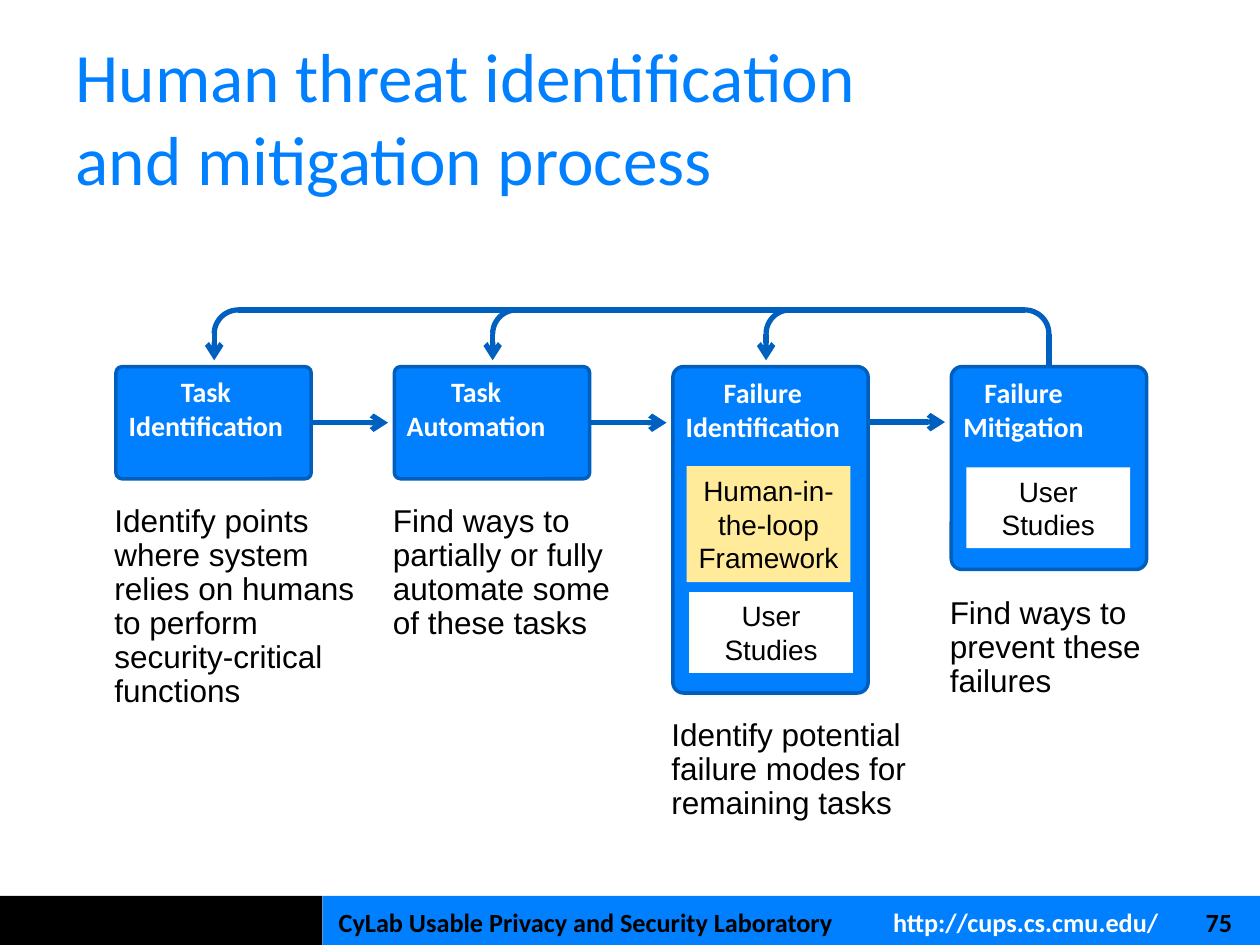
from dataclasses import dataclass

import pptx
import pptx.dml.color
import pptx.enum.dml
import pptx.enum.shapes
import pptx.enum.text
import pptx.oxml
import pptx.oxml.ns
import pptx.util
from pptx.util import Inches

BLUE, EDGE, ARROW = "0080FF", "005FBD", "0060BF"
BLACK, WHITE, CREAM = "000000", "FFFFFF", "FFEB99"
SHAPES = pptx.enum.shapes.MSO_SHAPE
ALIGN = pptx.enum.text.PP_ALIGN
ANCHOR = pptx.enum.text.MSO_ANCHOR

STAGE_LEFT, STAGE_TOP, STAGE_PITCH, STAGE_WIDTH = 0.92, 2.91, 2.21, 1.55
LABEL_INSET = 0.1
RAIL_Y, BEND, DROP_END = 2.46, 0.19, 2.86
FLOW_Y, FLOW_LENGTH = 3.35, 0.61


@dataclass
class Technique:
    name: str
    left: float
    top: float
    height: float
    color: str


@dataclass
class Stage:
    label: str
    label_width: float
    height: float
    caption: str
    caption_top: float
    techniques: tuple[Technique, ...] = ()


STAGES = [
    Stage("Task\nIdentification", 1.23, 0.89,
          "Identify points where system relies on humans to perform "
          "security-critical functions", 3.96),
    Stage("Task\nAutomation", 1.1, 0.89,
          "Find ways to partially or fully automate some of these tasks", 3.96),
    Stage("Failure\nIdentification", 1.23, 2.59,
          "Identify potential failure modes for remaining tasks", 5.66,
          (Technique("Human-in-\nthe-loop\nFramework", 5.45, 3.7, 0.92, CREAM),
           Technique("User\nStudies", 5.47, 4.7, 0.64, WHITE))),
    Stage("Failure\nMitigation", 0.95, 1.61,
          "Find ways to prevent these failures", 4.69,
          (Technique("User\nStudies", 7.67, 3.71, 0.64, WHITE),)),
]
FEEDBACK_DROPS = [1.7, 3.91, 6.08]


def rgb(color: str) -> pptx.dml.color.RGBColor:
    return pptx.dml.color.RGBColor.from_string(color)


def style(font, size: float, color: str, name: str, bold: bool = False) -> None:
    font.size = pptx.util.Pt(size)
    font.name = name
    font.bold = bold
    font.color.rgb = rgb(color)


def write(frame, text: str, size: float, color: str, name: str,
          bold: bool = False, align=ALIGN.LEFT):
    paragraph = frame.paragraphs[0]
    paragraph.text = text
    paragraph.alignment = align
    for run in paragraph.runs:
        style(run.font, size, color, name, bold)
    return paragraph


def add_block(slide, preset, left: float, top: float, width: float,
              height: float, color: str):
    block = slide.shapes.add_shape(preset, Inches(left), Inches(top),
                                   Inches(width), Inches(height))
    block.shadow.inherit = False
    block.fill.solid()
    block.fill.fore_color.rgb = rgb(color)
    block.line.fill.background()
    return block


def add_text_box(slide, left: float, top: float, width: float, height: float):
    box = slide.shapes.add_textbox(Inches(left), Inches(top),
                                   Inches(width), Inches(height))
    box.text_frame.word_wrap = True
    return box.text_frame


def draw_line(slide, x1: float, y1: float, x2: float, y2: float,
              arrow: bool = False):
    line = slide.shapes.add_connector(
        pptx.enum.shapes.MSO_CONNECTOR.STRAIGHT,
        Inches(x1), Inches(y1), Inches(x2), Inches(y2))
    line.line.color.rgb = rgb(ARROW)
    line.line.width = pptx.util.Pt(3)
    if arrow:
        outline = line.line._get_or_add_ln()
        outline.append(pptx.oxml.parse_xml(
            f'<a:tailEnd {pptx.oxml.ns.nsdecls("a")} type="arrow"/>'))
    line._element.spPr.append(pptx.oxml.parse_xml(
        f'<a:effectLst {pptx.oxml.ns.nsdecls("a")}/>'))
    return line


def draw_bend(slide, center_x: float, start: int) -> None:
    bend = slide.shapes.add_shape(SHAPES.ARC, Inches(center_x - BEND),
                                  Inches(RAIL_Y), Inches(2 * BEND),
                                  Inches(2 * BEND))
    bend.adjustments[0] = start * 0.6
    bend.adjustments[1] = (start + 90) % 360 * 0.6
    bend.shadow.inherit = False
    bend.fill.background()
    bend.line.color.rgb = rgb(ARROW)
    bend.line.width = pptx.util.Pt(3)


def draw_stage(slide, stage: Stage, left: float):
    box = add_block(slide, SHAPES.ROUNDED_RECTANGLE, left, STAGE_TOP,
                    STAGE_WIDTH, stage.height, BLUE)
    box.adjustments[0] = 0.055
    box.line.color.rgb = rgb(EDGE)
    box.line.width = pptx.util.Pt(2)
    label = box.text_frame
    label.word_wrap = False
    label.vertical_anchor = ANCHOR.TOP
    label.margin_left = Inches(LABEL_INSET)
    label.margin_right = Inches(STAGE_WIDTH - LABEL_INSET - stage.label_width)
    write(label, stage.label, 16, WHITE, "Calibri", True, ALIGN.CENTER)

    for technique in stage.techniques:
        card = add_block(slide, SHAPES.RECTANGLE, technique.left, technique.top,
                         1.3, technique.height, technique.color)
        card.text_frame.word_wrap = False
        card.text_frame.vertical_anchor = ANCHOR.MIDDLE
        write(card.text_frame, technique.name, 16, BLACK, "Arial",
              align=ALIGN.CENTER)

    caption = add_text_box(slide, left - 0.11, stage.caption_top, 2.13, 0.92)
    write(caption, stage.caption, 18, BLACK, "Arial").line_spacing = 0.9
    return box


def draw_process(slide) -> None:
    lefts = [STAGE_LEFT + i * STAGE_PITCH for i in range(len(STAGES))]
    boxes = [draw_stage(slide, stage, left)
             for stage, left in zip(STAGES, lefts)]
    for stage, box, left in zip(STAGES[:-1], boxes, lefts):
        edge = left + STAGE_WIDTH
        flow = draw_line(slide, edge, FLOW_Y, edge + FLOW_LENGTH, FLOW_Y, True)
        if not stage.techniques:
            flow.begin_connect(box, 3)
            flow.end_y = flow.begin_y

    source_x = lefts[-1] + STAGE_WIDTH / 2
    bend_y = RAIL_Y + BEND
    draw_line(slide, FEEDBACK_DROPS[0] + BEND, RAIL_Y, source_x - BEND, RAIL_Y)
    draw_bend(slide, source_x - BEND, 270)
    rise = draw_line(slide, source_x, bend_y, source_x, STAGE_TOP)
    rise.end_connect(boxes[-1], 0)
    for drop_x in FEEDBACK_DROPS:
        draw_bend(slide, drop_x + BEND, 180)
        draw_line(slide, drop_x, bend_y, drop_x, DROP_END, True)


def draw_footer(slide) -> None:
    add_block(slide, SHAPES.RECTANGLE, 0, 7.11, 2.56, 0.4, BLACK)
    add_block(slide, SHAPES.RECTANGLE, 2.56, 7.11, 7.45, 0.4, BLUE)
    footer = add_text_box(slide, 2.59, 7.14, 7.4, 0.35).paragraphs[0]
    stops = "".join(f'<a:tab pos="{Inches(stop)}" algn="l"/>'
                    for stop in (4.4, 6.88))
    footer._p.get_or_add_pPr().append(pptx.oxml.parse_xml(
        f'<a:tabLst {pptx.oxml.ns.nsdecls("a")}>{stops}</a:tabLst>'))
    for text, color in (("CyLab Usable Privacy and Security Laboratory\t", BLACK),
                        ("http://cups.cs.cmu.edu/\t", WHITE), ("75", BLACK)):
        run = footer.add_run()
        run.text = text
        style(run.font, 15, color, "Calibri", True)


def main() -> None:
    deck = pptx.Presentation()
    deck.slide_width, deck.slide_height = Inches(10), Inches(7.5)
    slide = deck.slides.add_slide(deck.slide_layouts[5])
    draw_footer(slide)
    title = slide.shapes.title
    title.left, title.top = Inches(0.5), Inches(0.3)
    title.width, title.height = Inches(9), Inches(1.25)
    title.text_frame.auto_size = pptx.enum.text.MSO_AUTO_SIZE.NONE
    title.text_frame.vertical_anchor = ANCHOR.MIDDLE
    write(title.text_frame, "Human threat identification \nand mitigation process",
          39.6, BLUE, "Calibri")
    draw_process(slide)
    deck.save("out.pptx")


if __name__ == "__main__":
    main()
